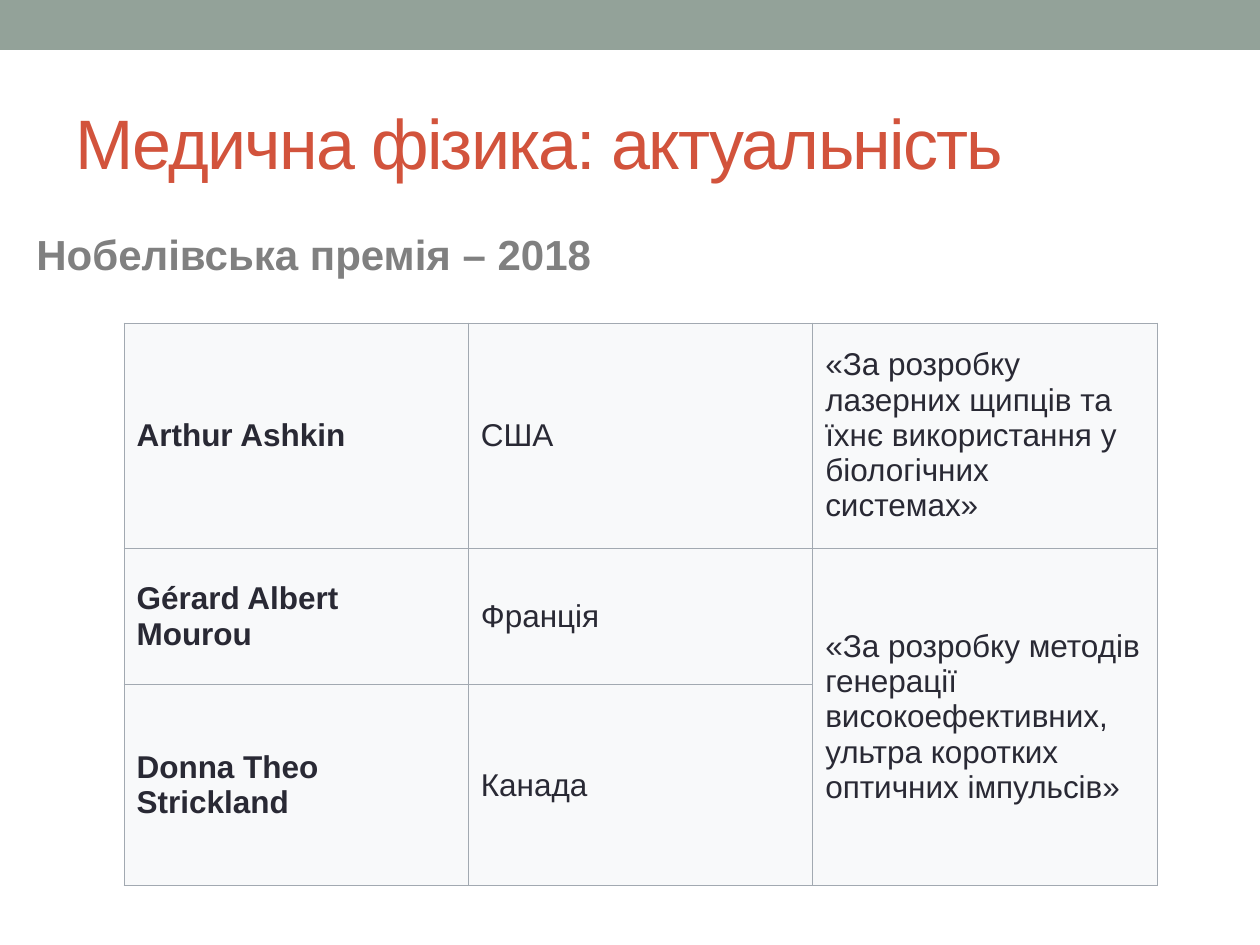
from lxml import etree
from pptx import Presentation
from pptx.dml.color import RGBColor
from pptx.enum.shapes import MSO_SHAPE
from pptx.enum.text import MSO_ANCHOR, MSO_AUTO_SIZE
from pptx.oxml.ns import qn
from pptx.util import Emu, Pt

RECT = MSO_SHAPE.RECTANGLE
MIDDLE = MSO_ANCHOR.MIDDLE
GROW = MSO_AUTO_SIZE.SHAPE_TO_FIT_TEXT
NO_FIT = MSO_AUTO_SIZE.NONE

SAGE = RGBColor(0x93, 0xA2, 0x99)
RED = RGBColor(0xD2, 0x53, 0x3C)
GRAY = RGBColor(0x80, 0x80, 0x80)
INK = RGBColor(0x29, 0x29, 0x34)
PALE = RGBColor(0xF8, 0xF9, 0xFA)
EDGE = RGBColor(0xA2, 0xA9, 0xB1)

FONT = "Arial"
ROWS = [
    ("Arthur Ashkin", "США",
     "«За розробку лазерних щипців та їхнє використання у біологічних системах»"),
    ("Gérard Albert Mourou", "Франція",
     "«За розробку методів генерації високоефективних, ультра коротких оптичних імпульсів»"),
    ("Donna Theo Strickland", "Канада", ""),
]
HEIGHTS = (225, 137, 201)


def px(n):
    """Turn px into EMU at 126 px to the inch."""
    return Emu(round(n * 914400 / 126))


def style(para, size, color, bold=False):
    """Set the font of a paragraph."""
    font = para.font
    font.name, font.size, font.bold = FONT, Pt(size), bold
    font.color.rgb = color


def add_band(slide, box):
    """Draw the plain band across the top."""
    band = slide.shapes.add_shape(RECT, *map(px, box))
    band.shadow.inherit = False
    band.fill.solid()
    band.fill.fore_color.rgb = SAGE
    band.line.fill.background()


def set_title(slide, box, text):
    """Place and format the title placeholder."""
    title = slide.shapes.title
    title.left, title.top, title.width, title.height = map(px, box)
    frame = title.text_frame
    frame.text = text
    frame.vertical_anchor = MIDDLE
    frame.auto_size = NO_FIT
    para = frame.paragraphs[0]
    para.alignment = 1
    style(para, 40, RED)
    para.runs[0].font.size = Pt(40)
    para.runs[0].font._element.set("spc", "-100")


def add_label(slide, box, text):
    """Add the bold line above the table."""
    frame = slide.shapes.add_textbox(*map(px, box)).text_frame
    frame.word_wrap = False
    frame.auto_size = GROW
    frame.text = text
    style(frame.paragraphs[0], 24, GRAY, True)


def add_edges(cell):
    """Give a cell thin lines on all four sides."""
    props = cell._tc.get_or_add_tcPr()
    for side in ("lnL", "lnR", "lnT", "lnB"):
        line = etree.SubElement(props, qn(f"a:{side}"), w=str(Pt(0.6)))
        fill = etree.SubElement(line, qn("a:solidFill"))
        etree.SubElement(fill, qn("a:srgbClr"), val=str(EDGE))


def add_prizes(slide, box):
    """Add the table of winners, countries and reasons."""
    frame = slide.shapes.add_table(len(ROWS), len(ROWS[0]), *map(px, box))
    table = frame.table
    table.first_row = table.horz_banding = False
    for row, high in zip(table.rows, HEIGHTS):
        row.height = px(high)
    for r, words in enumerate(ROWS):
        for c, text in enumerate(words):
            cell = table.cell(r, c)
            add_edges(cell)
            cell.fill.solid()
            cell.fill.fore_color.rgb = PALE
            cell.vertical_anchor = MIDDLE
            cell.text = text
            style(cell.text_frame.paragraphs[0], 18, INK, c == 0)
    table.cell(1, 2).merge(table.cell(2, 2))


def main():
    """Build the slide and save it."""
    deck = Presentation()
    deck.slide_width, deck.slide_height = px(1260), px(945)
    slide = deck.slides.add_slide(deck.slide_layouts[5])
    add_band(slide, (0, 0, 1260, 50))
    add_prizes(slide, (124, 323, 1033, sum(HEIGHTS)))
    add_label(slide, (24, 222, 586, 63), "Нобелівська премія – 2018")
    set_title(slide, (63, 73, 1134, 136), "Медична фізика: актуальність")
    deck.save("out.pptx")


if __name__ == "__main__":
    main()
